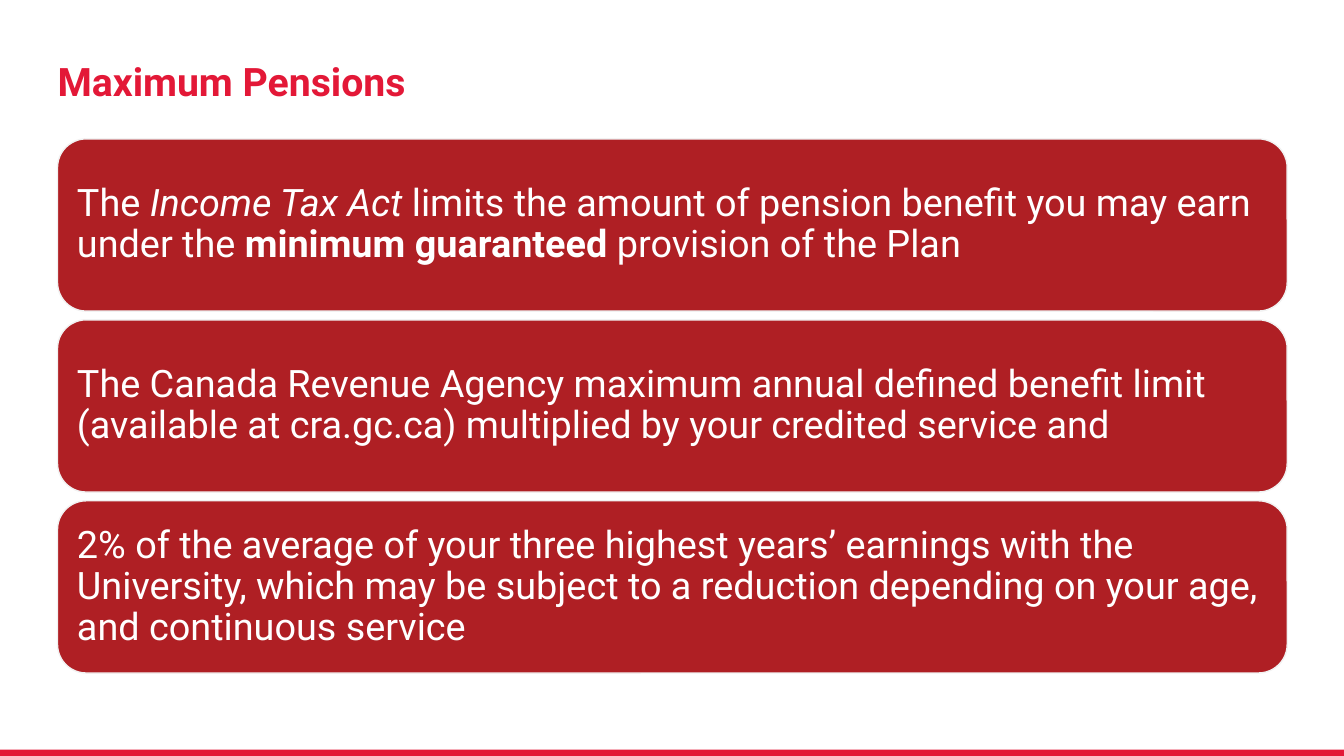
"""Build the Maximum Pensions slide with three stacked statement cards."""
from pptx import Presentation
from pptx.dml.color import RGBColor
from pptx.enum.shapes import MSO_SHAPE
from pptx.enum.text import MSO_ANCHOR, MSO_AUTO_SIZE, PP_ALIGN
from pptx.util import Cm, Pt

HEADING = "Maximum Pensions"
STATEMENTS = [
    [
        ("The ", {}),
        ("Income Tax Act ", {"italic": True}),
        ("limits the amount of pension benefit you may earn under the ", {}),
        ("minimum guaranteed ", {"bold": True}),
        ("provision of the Plan", {}),
    ],
    [("The Canada Revenue Agency maximum annual defined benefit limit "
      "(available at cra.gc.ca) multiplied by your credited service and", {})],
    [("2% of the average of your three highest years’ earnings with the "
      "University, which may be subject to a reduction depending on your age, "
      "and continuous service", {})],
]
COLORS = {"accent": "E31837", "card": "AF1F24", "edge": "F2F2F2", "text": "FFFFFF"}
HEADING_FONT = {"name": "Roboto", "size": Pt(28), "bold": True}
STATEMENT_FONT = {"name": "Roboto", "size": Pt(27)}
MARGINS = ("margin_left", "margin_top", "margin_right", "margin_bottom")

SLIDE_W, SLIDE_H = Cm(33.87), Cm(19.05)
LEFT, CARD_W, CARD_H = Cm(1.45), Cm(30.99), Cm(4.34)
FIRST_TOP, PITCH = Cm(3.5), Cm(4.56)
STRIPE_H = Cm(0.16)


def color(key):
    return RGBColor.from_string(COLORS[key])


def apply(target, values):
    for name, value in values.items():
        setattr(target, name, value)


def set_frame(frame, inset, anchor):
    apply(frame, dict.fromkeys(MARGINS, inset))
    apply(frame, {"word_wrap": True, "auto_size": MSO_AUTO_SIZE.NONE,
                  "vertical_anchor": anchor})


def add_runs(paragraph, runs, font, color_key, line_spacing):
    apply(paragraph, {"alignment": PP_ALIGN.LEFT, "line_spacing": line_spacing})
    for text, emphasis in runs:
        run = paragraph.add_run()
        run.text = text
        apply(run.font, {**font, **emphasis})
        run.font.color.rgb = color(color_key)


def add_block(slide, kind, box, fill):
    block = slide.shapes.add_shape(kind, *box)
    block.shadow.inherit = False
    block.fill.solid()
    block.fill.fore_color.rgb = color(fill)
    block.line.fill.background()
    return block


def main():
    deck = Presentation()
    apply(deck, {"slide_width": SLIDE_W, "slide_height": SLIDE_H})
    slide = deck.slides.add_slide(deck.slide_layouts[5])

    add_block(slide, MSO_SHAPE.RECTANGLE,
              (0, SLIDE_H - STRIPE_H, SLIDE_W, STRIPE_H), "accent")

    heading = slide.shapes.title
    apply(heading, {"left": LEFT, "top": Cm(0.64), "width": CARD_W, "height": Cm(2)})
    set_frame(heading.text_frame, 0, MSO_ANCHOR.BOTTOM)
    add_runs(heading.text_frame.paragraphs[0], [(HEADING, {})],
             HEADING_FONT, "accent", 0.85)

    for index, statement in enumerate(STATEMENTS):
        card = add_block(slide, MSO_SHAPE.ROUNDED_RECTANGLE,
                         (LEFT, FIRST_TOP + index * PITCH, CARD_W, CARD_H), "card")
        card.line.color.rgb = color("edge")
        card.line.width = Pt(1)
        set_frame(card.text_frame, Cm(0.28), MSO_ANCHOR.MIDDLE)
        add_runs(card.text_frame.paragraphs[0], statement,
                 STATEMENT_FONT, "text", 0.9)

    deck.save("out.pptx")


if __name__ == "__main__":
    main()
